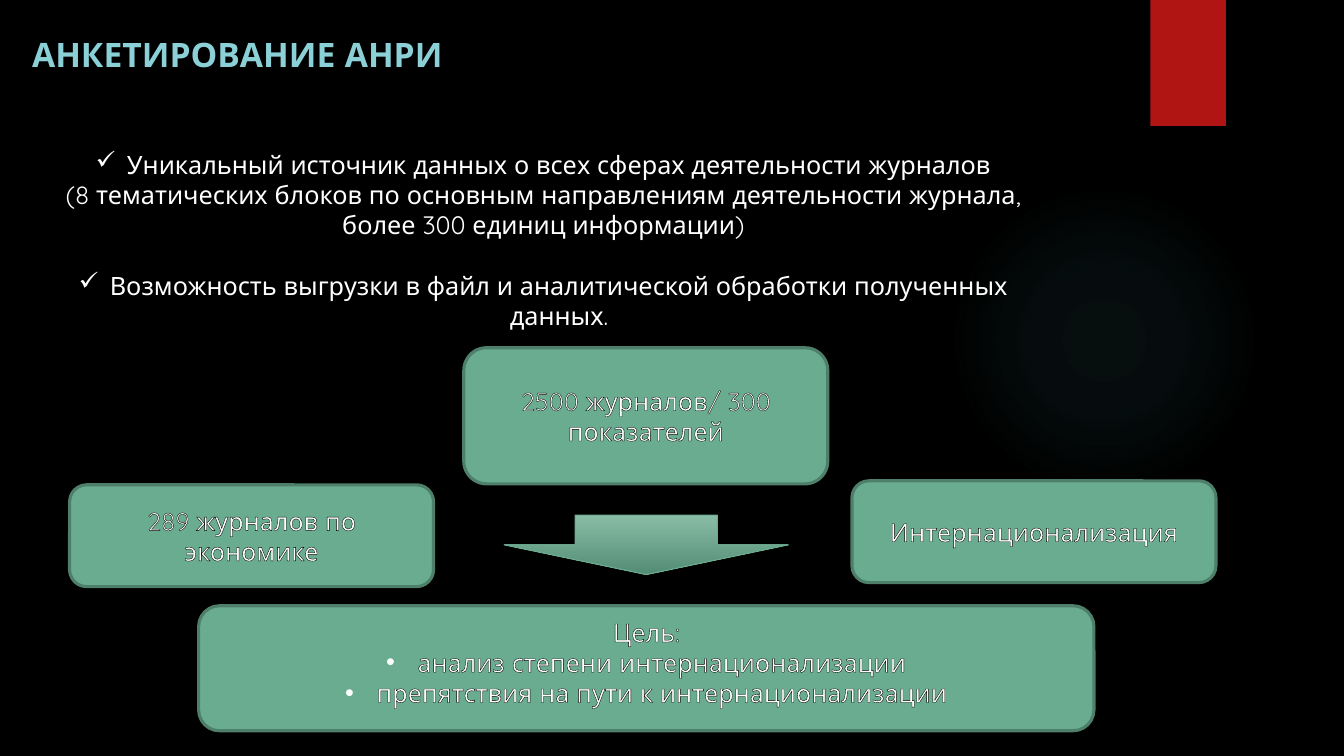
from lxml.etree import SubElement
from pptx import Presentation
from pptx.dml.color import RGBColor
from pptx.enum.shapes import MSO_SHAPE
from pptx.enum.text import MSO_ANCHOR, PP_ALIGN
from pptx.oxml import parse_xml
from pptx.oxml.ns import nsdecls, qn
from pptx.util import Pt

PX = 9144  # EMU in one px, 100 px to the inch
INDENT = 31

BLACK = RGBColor(0x00, 0x00, 0x00)
WHITE = RGBColor(0xFF, 0xFF, 0xFF)
RED = RGBColor(0xB0, 0x15, 0x13)
AQUA = RGBColor(0x8A, 0xD0, 0xD6)
GLOW = RGBColor(0x50, 0xB9, 0xC1)
GREEN = RGBColor(0x6A, 0xAC, 0x90)
DARK_GREEN = RGBColor(0x4E, 0x7F, 0x6B)
ARROW_TOP = RGBColor(0x89, 0xBD, 0xA7)
ARROW_BOTTOM = RGBColor(0x53, 0x8C, 0x74)

BODY = {"name": "Quicksand", "size": Pt(18), "bold": False}
TITLE = {"name": "Quicksand", "size": Pt(24), "bold": True}

# Each line: text, bullet or None, points of space before
TITLE_LINES = [("АНКЕТИРОВАНИЕ АНРИ", None, 0)]
SOURCE_LINES = [
    ("Уникальный источник данных о всех сферах деятельности журналов", "✓", 0),
    ("(8 тематических блоков по основным направлениям деятельности журнала, "
     "более 300 единиц информации)", None, 0),
    ("Возможность выгрузки в файл и аналитической обработки полученных данных.",
     "✓", 21.6),
]
GOAL_LINES = [
    ("Цель:", None, 0),
    ("анализ степени интернационализации", "•", 0),
    ("препятствия на пути к интернационализации", "•", 0),
]
# Each card: box, anchor, lines
CARDS = [
    ((69, 481, 361, 101), MSO_ANCHOR.MIDDLE, [("289 журналов по экономике", None, 0)]),
    ((845, 477, 361, 101), MSO_ANCHOR.MIDDLE, [("Интернационализация", None, 0)]),
    ((197, 601, 888, 124), MSO_ANCHOR.TOP, GOAL_LINES),
    ((460, 345, 361, 135), MSO_ANCHOR.MIDDLE, [("2500 журналов/ 300 показателей", None, 0)]),
]


def to_emu(box):
    return [length * PX for length in box]


def add_bullet(paragraph, character):
    properties = paragraph._p.get_or_add_pPr()
    properties.set("marL", str(INDENT * PX))
    properties.set("indent", str(-INDENT * PX))
    typeface = "Wingdings" if character == "✓" else "Arial"
    SubElement(properties, qn("a:buFont"), typeface=typeface)
    symbol = "ü" if character == "✓" else character
    SubElement(properties, qn("a:buChar"), char=symbol)


def outline_text(run):
    run._r.get_or_add_rPr().insert(0, parse_xml(
        f'<a:ln {nsdecls("a")} w="{Pt(0.75)}"><a:solidFill>'
        f'<a:srgbClr val="{BLACK}"/></a:solidFill></a:ln>'))


def write_lines(frame, lines, font_format, color, align, anchor, outlined=False):
    frame.word_wrap = True
    frame.vertical_anchor = anchor
    for number, (text, bullet, space) in enumerate(lines):
        paragraph = frame.add_paragraph() if number else frame.paragraphs[0]
        paragraph.alignment = align
        if space:
            paragraph.space_before = Pt(space)
        if bullet:
            add_bullet(paragraph, bullet)
        run = paragraph.add_run()
        run.text = text
        for attribute, value in font_format.items():
            setattr(run.font, attribute, value)
        run.font.color.rgb = color
        if outlined:
            outline_text(run)


def add_text(slide, box, *text_format):
    text_box = slide.shapes.add_textbox(*to_emu(box))
    write_lines(text_box.text_frame, *text_format)


def add_figure(slide, preset, box, fill=None, line=None, width=0):
    shape = slide.shapes.add_shape(preset, *to_emu(box))
    shape.shadow.inherit = False
    if fill is not None:
        shape.fill.solid()
        shape.fill.fore_color.rgb = fill
    if line is None:
        shape.line.fill.background()
    else:
        shape.line.color.rgb = line
        shape.line.width = Pt(width)
    return shape


def add_shadow(shape):
    effects = shape._element.spPr.find(qn("a:effectLst"))
    effects.append(parse_xml(
        f'<a:outerShdw {nsdecls("a")} blurRad="{Pt(3)}" dist="{Pt(2)}" dir="5400000" '
        f'rotWithShape="0"><a:srgbClr val="{BLACK}"><a:alpha val="45000"/>'
        '</a:srgbClr></a:outerShdw>'))


def set_gradient(shape, stops, direction):
    """Stops are position, colour and opacity, both numbers in percent."""
    shape.fill.gradient()
    gradient = shape._element.spPr.find(qn("a:gradFill"))
    marks = "".join(
        f'<a:gs pos="{position * 1000}"><a:srgbClr val="{color}">'
        f'<a:alpha val="{opacity * 1000}"/></a:srgbClr></a:gs>'
        for position, color, opacity in stops)
    gradient.getparent().replace(gradient, parse_xml(
        f'<a:gradFill {nsdecls("a")} rotWithShape="1"><a:gsLst>{marks}</a:gsLst>'
        f'{direction}</a:gradFill>'))


def main():
    presentation = Presentation()
    presentation.slide_width, presentation.slide_height = to_emu((1333, 750))
    slide = presentation.slides.add_slide(presentation.slide_layouts[6])
    slide.background.fill.solid()
    slide.background.fill.fore_color.rgb = BLACK

    # Backdrop: soft glow and red tab
    glow = add_figure(slide, MSO_SHAPE.OVAL, (941, 183, 308, 308))
    set_gradient(glow, [(0, GLOW, 7), (36, GLOW, 6), (69, GLOW, 0)],
                 '<a:path path="circle"><a:fillToRect l="50000" t="50000" '
                 'r="50000" b="50000"/></a:path>')
    add_shadow(add_figure(slide, MSO_SHAPE.RECTANGLE, (1141, 0, 75, 125), RED))

    # Title and description
    add_text(slide, (22, 29, 1048, 94), TITLE_LINES, TITLE, AQUA,
             PP_ALIGN.LEFT, MSO_ANCHOR.TOP)
    add_text(slide, (22, 143, 1034, 283), SOURCE_LINES, BODY, WHITE,
             PP_ALIGN.CENTER, MSO_ANCHOR.TOP)

    # Cards
    for box, anchor, lines in CARDS:
        card = add_figure(slide, MSO_SHAPE.ROUNDED_RECTANGLE, box, GREEN, DARK_GREEN, 2.25)
        write_lines(card.text_frame, lines, BODY, WHITE, PP_ALIGN.CENTER, anchor, True)

    # Arrow down to the goal
    arrow = add_figure(slide, MSO_SHAPE.DOWN_ARROW, (500, 511, 282, 59),
                       line=GREEN, width=0.75)
    set_gradient(arrow, [(0, ARROW_TOP, 100), (100, ARROW_BOTTOM, 100)],
                 '<a:lin ang="5400000" scaled="0"/>')
    add_shadow(arrow)

    presentation.save("out.pptx")


if __name__ == "__main__":
    main()
